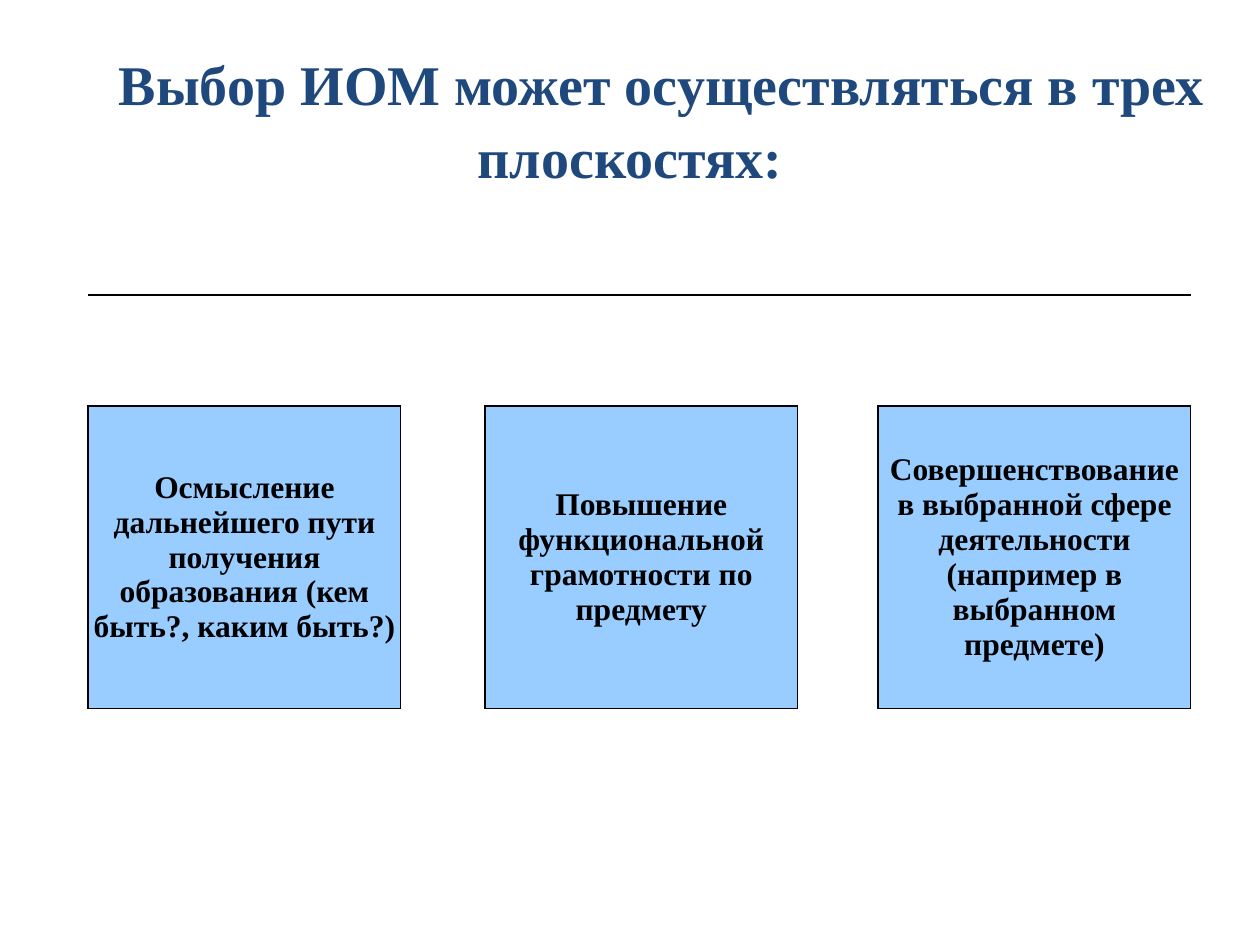
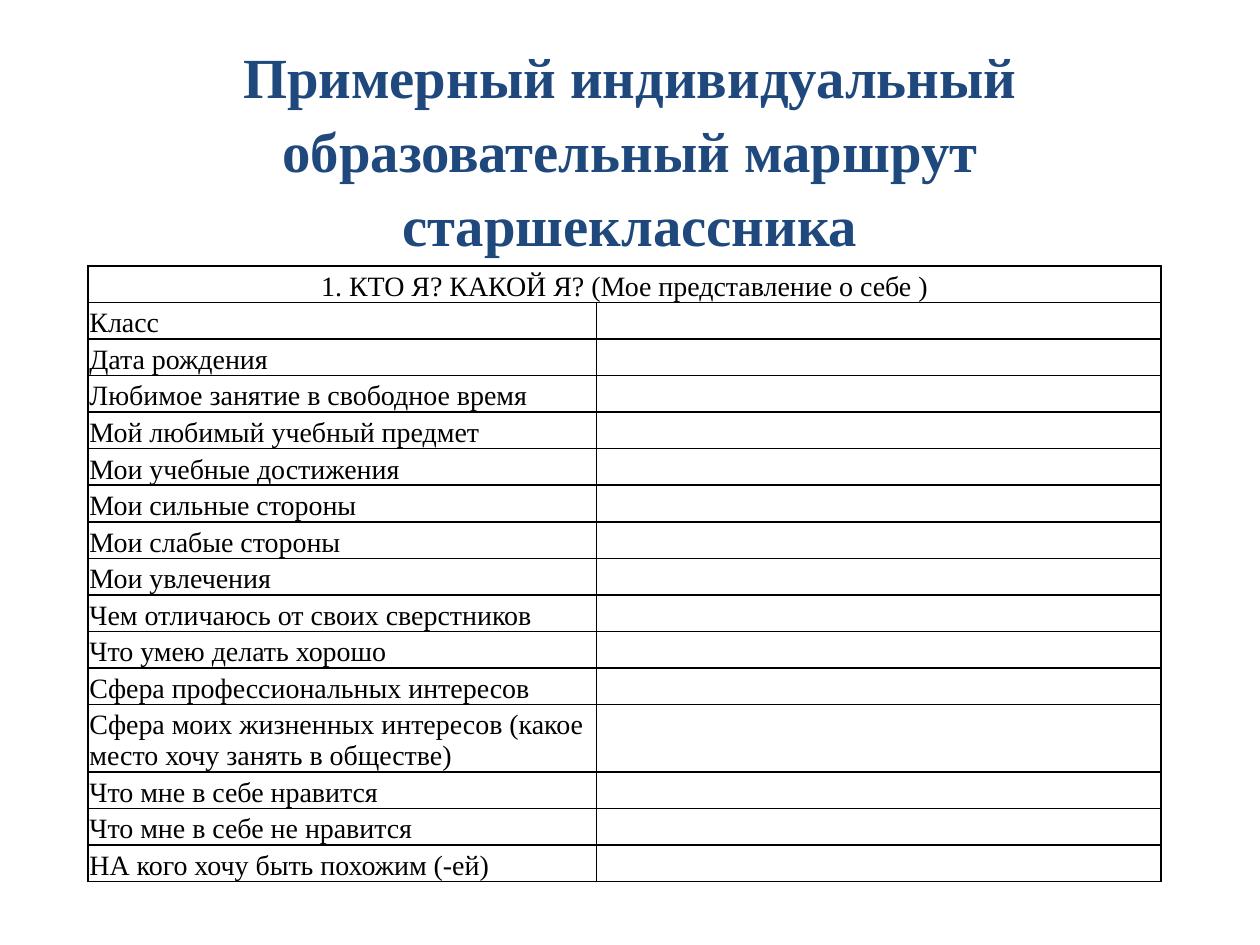
from lxml import etree
from pptx import Presentation
from pptx.dml.color import RGBColor
from pptx.enum.text import MSO_ANCHOR, PP_ALIGN
from pptx.oxml.ns import qn
from pptx.util import Pt

NAVY = RGBColor(0x1F, 0x49, 0x7D)
BLACK = RGBColor(0, 0, 0)
WHITE = RGBColor(255, 255, 255)
SKY = RGBColor(0x99, 0xCD, 0xFF)
FONT = "Times New Roman"
SIDES = "LRTB"

DIRECTIONS = [
    "Осмысление дальнейшего пути получения образования (кем быть?, каким быть?)",
    "Повышение функциональной грамотности по предмету",
    "Совершенствование в выбранной сфере деятельности (например в выбранном предмете)",
]
FORM_TITLE = "1. КТО Я? КАКОЙ Я? (Мое представление о себе )"
QUESTIONS = [
    "Класс",
    "Дата рождения",
    "Любимое занятие в свободное время",
    "Мой любимый учебный предмет",
    "Мои учебные достижения",
    "Мои сильные стороны",
    "Мои слабые стороны",
    "Мои увлечения",
    "Чем отличаюсь от своих сверстников",
    "Что умею делать хорошо",
    "Сфера профессиональных интересов",
    "Сфера моих жизненных интересов (какое место хочу занять в обществе)",
    "Что мне в себе нравится",
    "Что мне в себе не нравится",
    "НА кого хочу быть похожим (-ей)",
]
TALL_ROW = 12  # the question that takes two lines


def set_paragraph(p, text, size, color=BLACK, bold=False, align=PP_ALIGN.LEFT):
    p.text = text
    p.alignment = align
    p.font.name = FONT
    p.font.size = Pt(size)
    p.font.bold = bold
    p.font.color.rgb = color


def add_title(s, box, text, size, indent=0):
    tf = s.shapes.add_textbox(*map(Pt, box)).text_frame
    tf.word_wrap = True
    tf.vertical_anchor = MSO_ANCHOR.MIDDLE
    p = tf.paragraphs[0]
    set_paragraph(p, text, size, NAVY, True, PP_ALIGN.CENTER)
    p.line_spacing = 1.09
    if indent:
        p._p.get_or_add_pPr().set("indent", str(Pt(indent)))


def set_borders(cell, shown):
    """Draw a 1 pt line on the sides in shown and none on the others."""
    tc_pr = cell._tc.get_or_add_tcPr()
    for i, side in enumerate(SIDES):
        ln = etree.Element(qn(f"a:ln{side}"), w=str(Pt(1)))
        if side in shown:
            fill = etree.SubElement(ln, qn("a:solidFill"))
            etree.SubElement(fill, qn("a:srgbClr"), val=str(BLACK))
        else:
            etree.SubElement(ln, qn("a:noFill"))
        tc_pr.insert(i, ln)


def fill_cell(cell, text, size, anchor, borders, fill=WHITE, **style):
    cell.margin_left = cell.margin_right = Pt(0.72)
    cell.margin_top = cell.margin_bottom = 0
    cell.vertical_anchor = anchor
    cell.fill.solid()
    cell.fill.fore_color.rgb = fill
    set_borders(cell, borders)
    set_paragraph(cell.text_frame.paragraphs[0], text, size, **style)


def add_grid(s, left, top, widths, heights):
    frame = s.shapes.add_table(len(heights), len(widths), Pt(left), Pt(top),
                               Pt(sum(widths)), Pt(sum(heights)))
    table = frame.table
    table.first_row = table.horz_banding = False
    for column, width in zip(table.columns, widths):
        column.width = Pt(width)
    for row, height in zip(table.rows, heights):
        row.height = Pt(height)
    return table


def add_directions(s, left, top):
    """Three boxes under a rule, with gap columns between them."""
    box = 178.6
    table = add_grid(s, left, top, [box, 48.2, box, 46.1, box], [63.6, 172.8])
    for col in range(5):
        fill_cell(table.cell(0, col), "", 18, MSO_ANCHOR.MIDDLE,
                  "T" if col % 2 else "TB")
        if col % 2:
            fill_cell(table.cell(1, col), "", 18, MSO_ANCHOR.MIDDLE, "LR")
        else:
            fill_cell(table.cell(1, col), DIRECTIONS[col // 2], 18, MSO_ANCHOR.MIDDLE,
                      SIDES, SKY, bold=True, align=PP_ALIGN.CENTER)


def add_form(s, left, top):
    """Heading row across both columns, then questions with empty answers."""
    heights = [35.4 if i == TALL_ROW else 20.9 for i in range(len(QUESTIONS) + 1)]
    table = add_grid(s, left, top, [290.4, 322.8], heights)
    rows = [FORM_TITLE] + QUESTIONS
    for i, question in enumerate(rows):
        align = PP_ALIGN.LEFT if i else PP_ALIGN.CENTER
        for col, text in enumerate([question, ""]):
            fill_cell(table.cell(i, col), text, 16, MSO_ANCHOR.BOTTOM, SIDES, align=align)
    table.cell(0, 0).merge(table.cell(0, 1))


def main():
    prs = Presentation()
    prs.slide_width, prs.slide_height = Pt(720), Pt(540)
    blank = prs.slide_layouts[6]

    # Three directions of choice
    s = prs.slides.add_slide(blank)
    add_title(s, (22.3, 21.6, 675.4, 90),
              "Выбор ИОМ может осуществляться в трех плоскостях:", 32, indent=36)
    add_directions(s, 50.4, 168.5)

    # Self-portrait form
    s = prs.slides.add_slide(blank)
    add_title(s, (36, 21.6, 648, 124.6),
              "Примерный индивидуальный образовательный маршрут старшеклассника", 32.4)
    add_form(s, 50.4, 151.9)

    prs.save("out.pptx")


if __name__ == "__main__":
    main()
